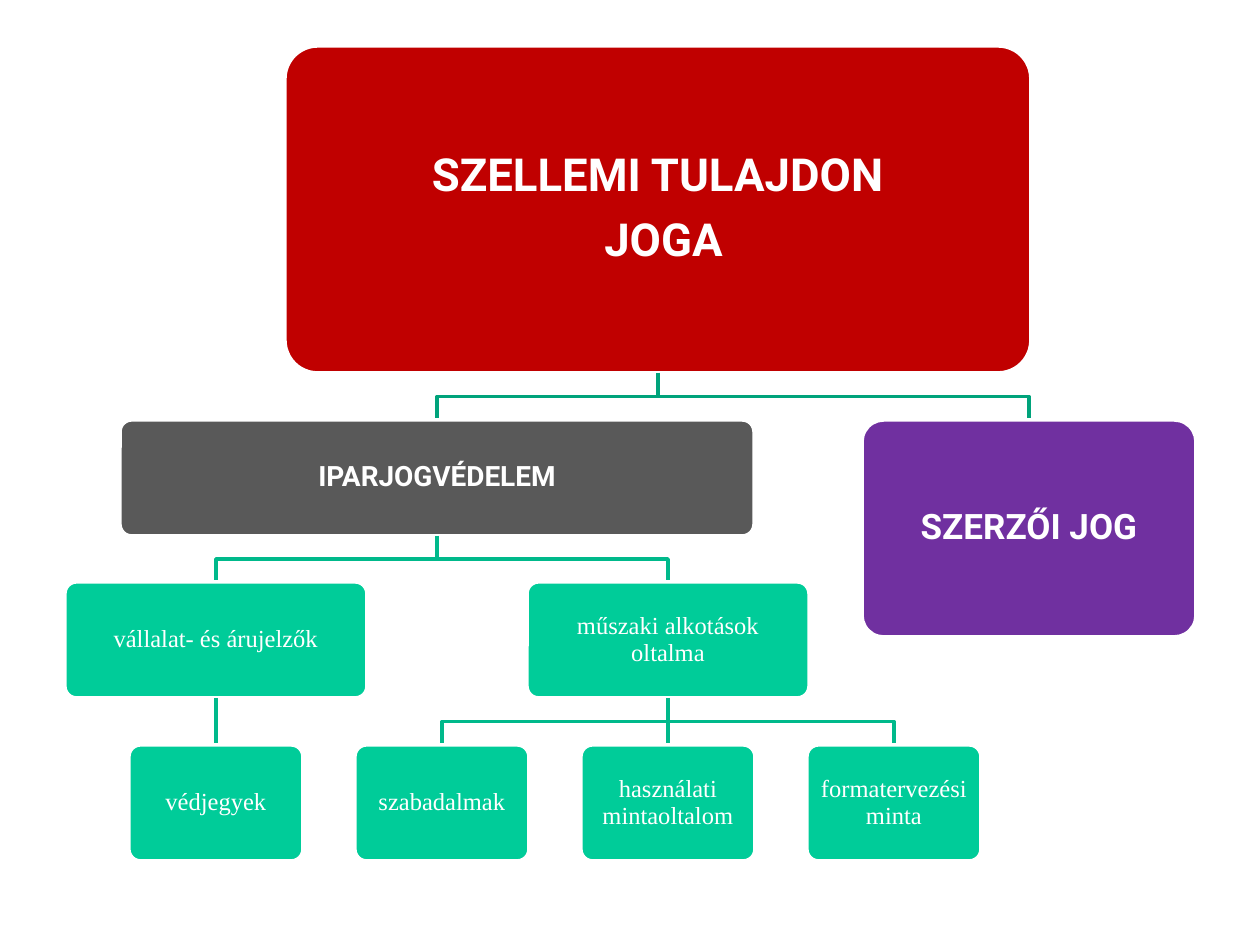
from collections import namedtuple

from lxml.etree import SubElement
from pptx import Presentation
from pptx.dml.color import RGBColor
from pptx.enum.shapes import MSO_CONNECTOR, MSO_SHAPE
from pptx.enum.text import MSO_ANCHOR, PP_ALIGN
from pptx.oxml.ns import qn
from pptx.util import Pt

SCALE = 914400 / 126
COLOURS = {
    "white": "FFFFFF",
    "red": "C00000",
    "grey": "595959",
    "purple": "7030A0",
    "green": "00CC99",
    "upper line": "00A37B",
    "lower line": "00B98B",
}
Style = namedtuple("Style", "fill font size bold inset")
Node = namedtuple("Node", "text left top width height style children branch")

RIGHTS = Style("red", "Roboto", 26, True, 14)
INDUSTRIAL = Style("grey", "Roboto", 16, True, 9)
COPYRIGHT = Style("purple", "Roboto", 20, True, 10)
DETAIL = Style("green", "Times New Roman", 14, False, 7)
ROW_HEIGHT = 116
LEAF_LEFT, LEAF_STEP, LEAF_WIDTH = 129, 226, 174


def px(length):
    """Turn pixels into EMU."""
    return round(length * SCALE)


def colour(name):
    """Return the named colour."""
    return RGBColor.from_string(COLOURS[name])


def leaf(column, text):
    """Describe a bottom-row box by its column."""
    left = LEAF_LEFT + column * LEAF_STEP
    return Node(text, left, 745, LEAF_WIDTH, ROW_HEIGHT, DETAIL, [], None)


def rights_tree():
    """Describe the hierarchy of rights."""
    marks = Node("vállalat- és árujelzők", 65, 582, 302, ROW_HEIGHT, DETAIL,
                 [leaf(0, "védjegyek")], "lower line")
    technical = Node("műszaki alkotások oltalma", 527, 582, 282, ROW_HEIGHT, DETAIL,
                     [leaf(1, "szabadalmak"), leaf(2, "használati mintaoltalom"),
                      leaf(3, "formatervezési minta")], "lower line")
    industrial = Node("IPARJOGVÉDELEM", 120, 420, 634, ROW_HEIGHT, INDUSTRIAL,
                      [marks, technical], "lower line")
    copyright_law = Node("SZERZŐI JOG", 862, 420, 334, 217, COPYRIGHT, [], None)
    return Node("SZELLEMI TULAJDON\n JOGA", 285, 46, 746, 327, RIGHTS,
                [industrial, copyright_law], "upper line")


def add_box(page, node):
    """Draw a rounded box with centred text."""
    style = node.style
    box = page.shapes.add_shape(MSO_SHAPE.ROUNDED_RECTANGLE, px(node.left), px(node.top),
                                px(node.width), px(node.height))
    box.adjustments[0] = 0.1
    box.shadow.inherit = False
    box.fill.solid()
    box.fill.fore_color.rgb = colour(style.fill)
    box.line.color.rgb = colour("white")
    box.line.width = Pt(2)
    frame = box.text_frame
    frame.text = node.text
    frame.word_wrap = True
    frame.vertical_anchor = MSO_ANCHOR.MIDDLE
    frame.margin_left = frame.margin_right = px(style.inset)
    frame.margin_top = frame.margin_bottom = px(style.inset)
    for paragraph in frame.paragraphs:
        paragraph.alignment = PP_ALIGN.CENTER
        paragraph.line_spacing = 0.9
        paragraph.space_after = Pt(round(style.size * 0.35))
        for span in paragraph.runs:
            span.font.name = style.font
            span.font.size = Pt(style.size)
            span.font.bold = style.bold
            span.font.color.rgb = colour("white")


def add_branch(page, parent, child):
    """Join the bottom of a parent to the top of its child."""
    start = parent.left + parent.width / 2
    end = child.left + child.width / 2
    bottom = parent.top + parent.height
    middle = (bottom + child.top) / 2
    if start == end:
        branch = page.shapes.add_connector(MSO_CONNECTOR.STRAIGHT, px(start), px(bottom),
                                           px(end), px(child.top))
        SubElement(branch.line._get_or_add_ln().getparent(), qn("a:effectLst"))
    else:
        builder = page.shapes.build_freeform(px(start), px(bottom))
        corners = [(start, middle), (end, middle), (end, child.top)]
        builder.add_line_segments([(px(x), px(y)) for x, y in corners], close=False)
        branch = builder.convert_to_shape()
        branch.fill.background()
        branch.shadow.inherit = False
    branch.line.color.rgb = colour(parent.branch)
    branch.line.width = Pt(2)


def add_tree(page, node):
    """Draw a box and everything below it."""
    add_box(page, node)
    for child in node.children:
        add_branch(page, node, child)
        add_tree(page, child)


def main():
    """Build the slide and save it."""
    deck = Presentation()
    deck.slide_width, deck.slide_height = px(1260), px(945)
    page = deck.slides.add_slide(deck.slide_layouts[6])
    add_tree(page, rights_tree())
    deck.save("out.pptx")


if __name__ == "__main__":
    main()
